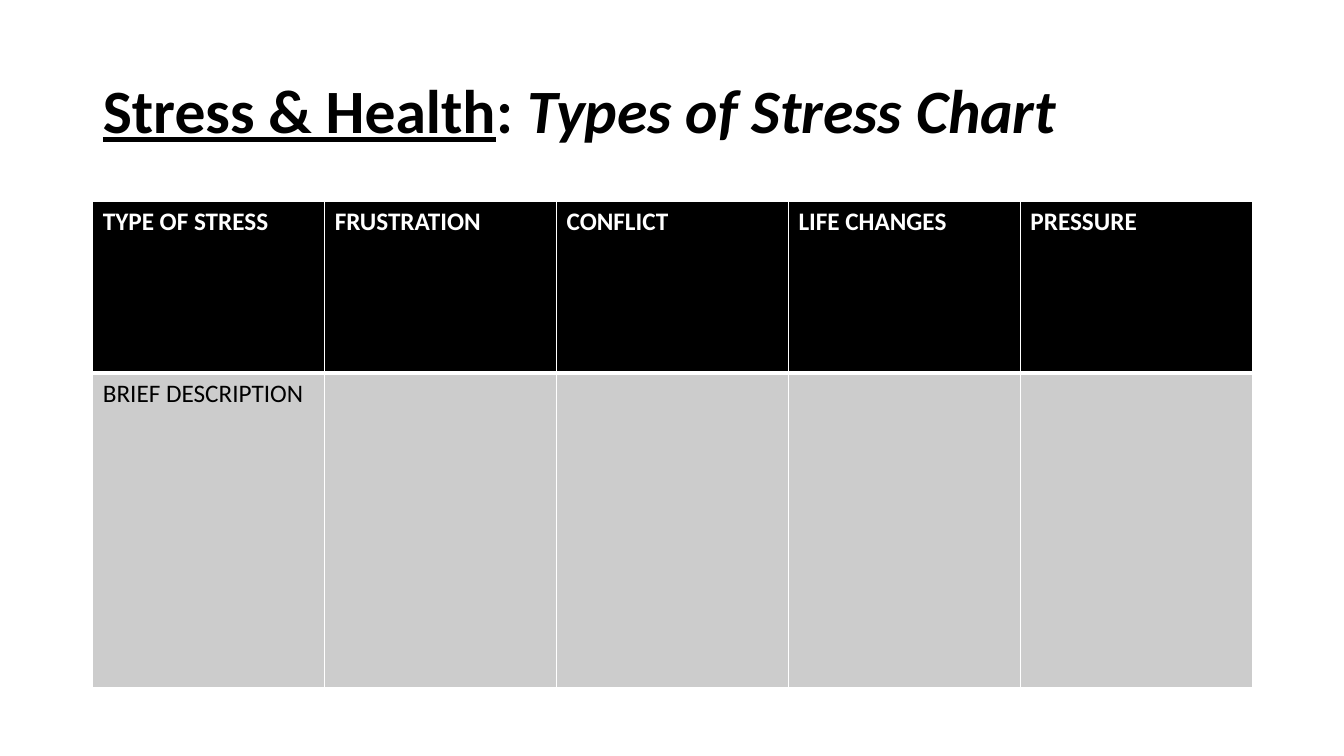
from lxml.etree import SubElement
from pptx import Presentation
from pptx.dml.color import RGBColor
from pptx.enum.text import MSO_ANCHOR, MSO_AUTO_SIZE, PP_ALIGN
from pptx.oxml.ns import qn
from pptx.util import Inches, Pt

# Content
TITLE = [
    ("Stress & Health", {"underline": True}),
    (": ", {}),
    ("Types of Stress Chart", {"italic": True}),
]
ROWS = [
    ["TYPE OF STRESS", "FRUSTRATION", "CONFLICT", "LIFE CHANGES", "PRESSURE"],
    ["BRIEF DESCRIPTION", "", "", "", ""],
]

# Look and layout, in inches
FONT = "Calibri"
BLACK = RGBColor(0x00, 0x00, 0x00)
WHITE = RGBColor(0xFF, 0xFF, 0xFF)
GRAY = RGBColor(0xCC, 0xCC, 0xCC)
LEFT, WIDTH = 0.92, 11.5
TITLE_TOP, TITLE_HEIGHT = 0.4, 1.45
TABLE_TOP, ROW_HEIGHTS = 2, [1.7, 3.12]
THIN, THICK = 1, 3


def add_text(para, text, size=18, color=BLACK, bold=False, italic=False, underline=False):
    span = para.add_run()
    span.text = text
    font = span.font
    font.name, font.size, font.color.rgb = FONT, Pt(size), color
    font.bold, font.italic, font.underline = bold, italic, underline


def add_borders(cell, **widths):
    properties = cell._tc.get_or_add_tcPr()
    for side in "LRTB":
        line = SubElement(properties, qn(f"a:ln{side}"), w=str(Pt(widths.get(side, THIN))))
        fill = SubElement(line, qn("a:solidFill"))
        SubElement(fill, qn("a:srgbClr"), val=str(WHITE))


def add_title(page):
    box = page.shapes.title
    box.left, box.top = Inches(LEFT), Inches(TITLE_TOP)
    box.width, box.height = Inches(WIDTH), Inches(TITLE_HEIGHT)
    frame = box.text_frame
    frame.word_wrap = True
    frame.auto_size = MSO_AUTO_SIZE.NONE
    frame.vertical_anchor = MSO_ANCHOR.MIDDLE
    para = frame.paragraphs[0]
    para.alignment = PP_ALIGN.LEFT
    para.line_spacing = 0.9
    for text, style in TITLE:
        add_text(para, text, size=44, bold=True, **style)


def add_stress_table(page):
    table = page.shapes.add_table(
        len(ROWS), len(ROWS[0]), Inches(LEFT), Inches(TABLE_TOP),
        Inches(WIDTH), Inches(sum(ROW_HEIGHTS))).table
    table.horz_banding = False
    for column in table.columns:
        column.width = Inches(WIDTH / len(ROWS[0]))
    for row_index, texts in enumerate(ROWS):
        table.rows[row_index].height = Inches(ROW_HEIGHTS[row_index])
        heading = row_index == 0
        for column_index, text in enumerate(texts):
            cell = table.cell(row_index, column_index)
            # The heavy rule separates the heading from the body
            add_borders(cell, **{"B" if heading else "T": THICK})
            cell.fill.solid()
            cell.fill.fore_color.rgb = BLACK if heading else GRAY
            if text:
                add_text(cell.text_frame.paragraphs[0], text,
                         color=WHITE if heading else BLACK, bold=heading)


def main():
    deck = Presentation()
    deck.slide_width, deck.slide_height = Inches(13.33), Inches(7.5)
    page = deck.slides.add_slide(deck.slide_layouts.get_by_name("Title Only"))
    add_title(page)
    add_stress_table(page)
    deck.save("out.pptx")


if __name__ == "__main__":
    main()
